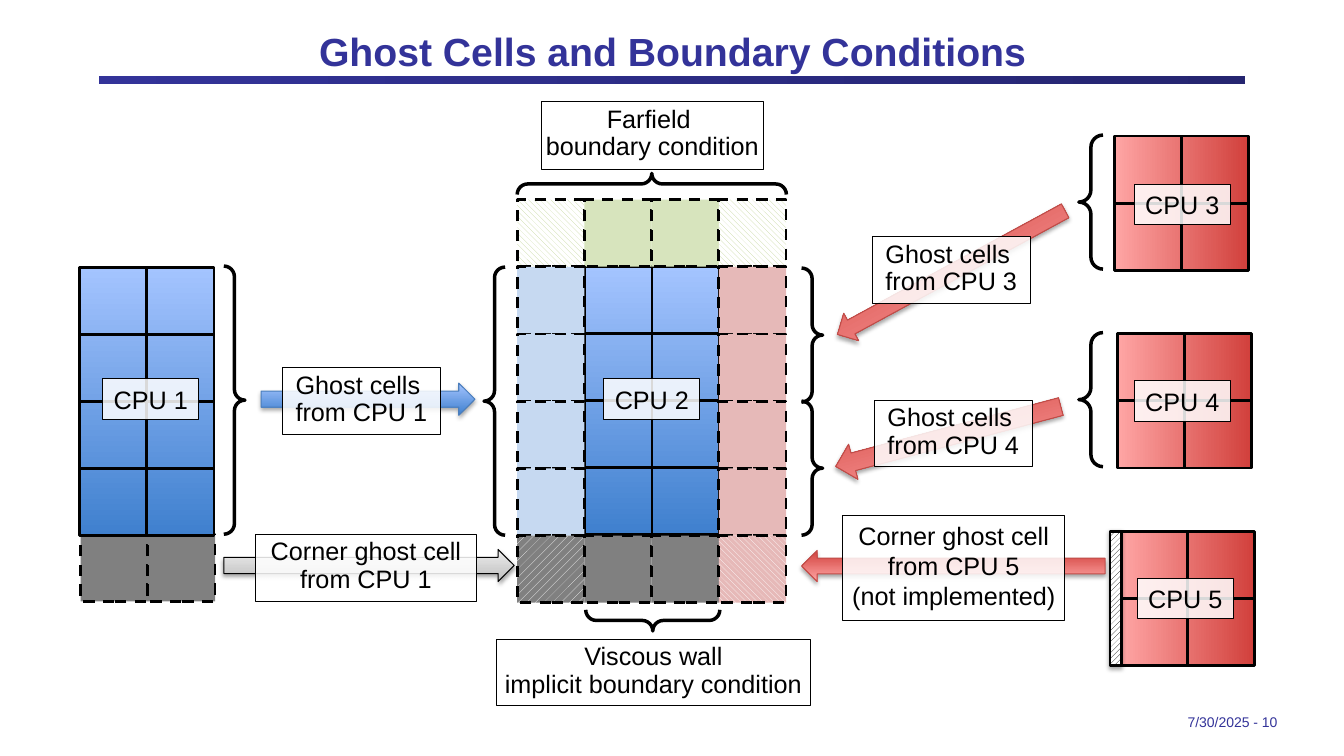
"""Build the slide on ghost cells and boundary conditions."""
from lxml.etree import SubElement
from pptx import Presentation
from pptx.dml.color import RGBColor
from pptx.enum.dml import MSO_LINE, MSO_PATTERN
from pptx.enum.shapes import MSO_CONNECTOR, MSO_SHAPE
from pptx.enum.text import MSO_ANCHOR, MSO_AUTO_SIZE, PP_ALIGN
from pptx.oxml.ns import qn
from pptx.util import Pt

PX = 9144
BLACK = RGBColor(0x00, 0x00, 0x00)
WHITE = RGBColor(0xFF, 0xFF, 0xFF)
NAVY = RGBColor(0x33, 0x33, 0x99)
INK = RGBColor(0x25, 0x25, 0x70)
GRAY = RGBColor(0x80, 0x80, 0x80)
SILVER = RGBColor(0xBD, 0xBD, 0xBD)
PEARL = RGBColor(0xEE, 0xEE, 0xEE)
BLUE = RGBColor(0x3F, 0x80, 0xCE)
SKY = RGBColor(0xA4, 0xC4, 0xFF)
EDGE = RGBColor(0x4B, 0x7E, 0xBC)
ICE = RGBColor(0xC6, 0xD9, 0xF1)
RED = RGBColor(0xD1, 0x40, 0x3C)
CORAL = RGBColor(0xFF, 0xA6, 0xA5)
RUST = RGBColor(0xBF, 0x4C, 0x48)
ROSE = RGBColor(0xE6, 0xB9, 0xB8)
GREEN = RGBColor(0xD7, 0xE4, 0xBD)
MOSS = RGBColor(0xC3, 0xD6, 0x9B)

UP = MSO_PATTERN.WIDE_UPWARD_DIAGONAL
DOWN = MSO_PATTERN.WIDE_DOWNWARD_DIAGONAL
DASHED = MSO_PATTERN.DASHED_UPWARD_DIAGONAL
BLUES = ("grad", BLUE, SKY, 90)
REDS = ("grad", RED, CORAL, 90)
GRAYS = ("grad", SILVER, PEARL, 90)
SIDE = ("grad", RED, CORAL, 180)

TITLE = "Ghost Cells and Boundary Conditions"
FOOT = "7/30/2025 - 10"
CELL = 200 / 3
PAINTS = {
    "g": ("solid", GREEN), "b": ("solid", ICE), "r": ("solid", ROSE),
    "k": ("solid", GRAY), "G": ("hatch", DOWN, MOSS, WHITE),
    "K": ("hatch", DASHED, WHITE, GRAY), "R": ("hatch", DOWN, WHITE, ROSE),
}
GRIDS = [
    (513, 198, ["GggG", "b  r", "b  r", "b  r", "b  r", "KkkR"]),
    (80, 530, ["kk"]),
]
CORE = ("CPU 2", 580, 264, 4, BLUES, 599, 376)
BLOCKS = [
    ("CPU 1", 79, 265, 4, BLUES, 102, 376),
    ("CPU 3", 1105, 135, 2, SIDE, 1125, 183),
    ("CPU 4", 1108, 331, 2, SIDE, 1125, 378),
    ("CPU 5", 1111, 527, 2, SIDE, 1128, 574),
]
BRACES = [
    (636, 49, 21, 267, True, 270), (480, 265, 21, 266, False, 0),
    (222, 264, 21, 266, True, 0), (795, 266, 21, 133, True, 0),
    (795, 398, 21, 133, True, 0), (1070, 134, 24, 133, False, 0),
    (1070, 330, 24, 133, False, 0), (637, 549, 21, 133, True, 90),
]
ARROWS = [
    (222, 545, 288, 32, 0, GRAYS, BLACK),
    (259, 380, 212, 32, 0, BLUES, EDGE),
    (815, 255, 257, 31, 151.5, REDS, RUST),
    (825, 415, 231, 36, 165.1, REDS, RUST),
    (795, 546, 301, 31, 180, REDS, RUST),
]
LABELS = [
    (537, 101, 220, 67, 0.9, ["Farfield ", "boundary condition"]),
    (253, 530, 220, 67, 0.9, ["Corner ghost cell", "from CPU 1"]),
    (280, 365, 157, 66, 0.9, ["Ghost cells ", "from CPU 1"]),
    (865, 235, 157, 66, 0.9, ["Ghost cells ", "from CPU 3"]),
    (867, 397, 157, 66, 0.9, ["Ghost cells ", "from CPU 4"]),
    (836, 511, 220, 105, 1.0,
     ["Corner ghost cell", "from CPU 5", "(not implemented)"]),
    (492, 634, 312, 66, 0.9, ["Viscous wall", "implicit boundary condition"]),
]


def px(*vals):
    return [round(v * PX) for v in vals]


def style(item, **vals):
    for key, val in vals.items():
        setattr(item, key, val)


def frame(item, pad, side, **vals):
    wide, high = px(pad, side)
    style(item, margin_left=wide, margin_right=wide, margin_top=high,
          margin_bottom=high, auto_size=MSO_AUTO_SIZE.NONE, **vals)


def write(para, text, size, color, **vals):
    run = para.add_run()
    run.text = text
    style(run.font, name="Arial", size=Pt(size), **vals)
    run.font.color.rgb = color


def paint(fill, kind, *vals):
    if kind == "none":
        fill.background()
    elif kind == "solid":
        fill.solid()
        fill.fore_color.rgb = vals[0]
    elif kind == "hatch":
        fill.patterned()
        fill.pattern = vals[0]
        fill.fore_color.rgb, fill.back_color.rgb = vals[1:]
    else:
        fill.gradient()
        fill.gradient_angle = vals[2]
        for stop, color in zip(fill.gradient_stops, vals):
            stop.color.rgb = color


def shade(shape):
    glow = SubElement(shape.element.spPr.find(qn("a:effectLst")),
                      qn("a:outerShdw"), blurRad=str(Pt(3.1)),
                      dist=str(Pt(1.8)), dir="5400000", rotWithShape="0")
    tint = SubElement(glow, qn("a:srgbClr"), val="000000")
    SubElement(tint, qn("a:alpha"), val="35000")


def draw(kind, box, fill, width=2, color=BLACK, dash=None, shadow=False):
    shape = slide.shapes.add_shape(kind, *px(*box))
    shape.shadow.inherit = False
    paint(shape.fill, *fill)
    if width:
        shape.line.color.rgb = color
        style(shape.line, width=Pt(width), dash_style=dash)
    else:
        shape.line.fill.background()
    if shadow:
        shade(shape)
    return shape


def rule(*ends):
    line = slide.shapes.add_connector(MSO_CONNECTOR.STRAIGHT, *px(*ends))
    line.line.color.rgb = BLACK
    line.line.width = Pt(2)
    SubElement(line.element.spPr, qn("a:effectLst"))


def label(x, y, wide, high, gap, lines):
    shape = draw(MSO_SHAPE.RECTANGLE, (x, y, wide, high), ("solid", WHITE), 0.75)
    tint = shape.element.spPr.find(".//" + qn("a:srgbClr"))
    SubElement(tint, qn("a:alpha"), val="85000")
    body = shape.text_frame
    frame(body, 5, 5, word_wrap=False, vertical_anchor=MSO_ANCHOR.TOP)
    for num, text in enumerate(lines):
        para = body.add_paragraph() if num else body.paragraphs[0]
        style(para, alignment=PP_ALIGN.CENTER, line_spacing=gap)
        write(para, text, 18, BLACK)


def block(name, x, y, rows, fill, left, top):
    wide, high = 2 * CELL, rows * CELL
    draw(MSO_SHAPE.RECTANGLE, (x, y, wide, high), fill, shadow=name == "CPU 2")
    rule(x + CELL, y, x + CELL, y + high)
    for row in range(1, rows):
        rule(x, y + row * CELL, x + wide, y + row * CELL)
    label(left, top, 95, 40, 1.0, [name])


def main():
    draw(MSO_SHAPE.RECTANGLE, (98, 75, 1137, 8), ("grad", NAVY, INK, 0), 0)
    head = slide.shapes.title
    foot = slide.shapes.add_textbox(*px(989, 700, 278, 33))
    left, top, width, height = px(67, 21, 1200, 58)
    style(head, left=left, top=top, width=width, height=height)
    for item, text, size, bold, side, pad in [
            (head, TITLE, 28, True, PP_ALIGN.CENTER, 10),
            (foot, FOOT, 10, False, PP_ALIGN.RIGHT, 0)]:
        frame(item.text_frame, pad, 0, word_wrap=True,
              vertical_anchor=MSO_ANCHOR.MIDDLE)
        para = item.text_frame.paragraphs[0]
        para.alignment = side
        write(para, text, size, NAVY, bold=bold)

    block(*CORE)
    for x, y, rows in GRIDS:
        for row, keys in enumerate(rows):
            for col, key in enumerate(keys):
                if key in PAINTS:
                    box = (x + col * CELL, y + row * CELL, CELL, CELL)
                    draw(MSO_SHAPE.RECTANGLE, box, PAINTS[key],
                         dash=MSO_LINE.DASH)
    for item in BLOCKS:
        block(*item)
    draw(MSO_SHAPE.RECTANGLE, (1101, 527, 11, 133),
         ("hatch", UP, BLACK, WHITE), shadow=True)
    for *box, flip, turn in BRACES:
        brace = draw(MSO_SHAPE.LEFT_BRACE, box, ("none",), 2.5)
        brace.adjustments[0] = 0.5
        brace.rotation = turn
        if flip:
            brace.element.spPr.xfrm.set("flipH", "1")
    for *box, turn, fill, edge in ARROWS:
        arrow = draw(MSO_SHAPE.RIGHT_ARROW, box, fill, 0.75, edge, shadow=True)
        arrow.rotation = turn
    for item in LABELS:
        label(*item)
    deck.save("out.pptx")


if __name__ == "__main__":
    deck = Presentation()
    deck.slide_width, deck.slide_height = px(1333, 750)
    slide = deck.slides.add_slide(deck.slide_layouts[5])
    main()
